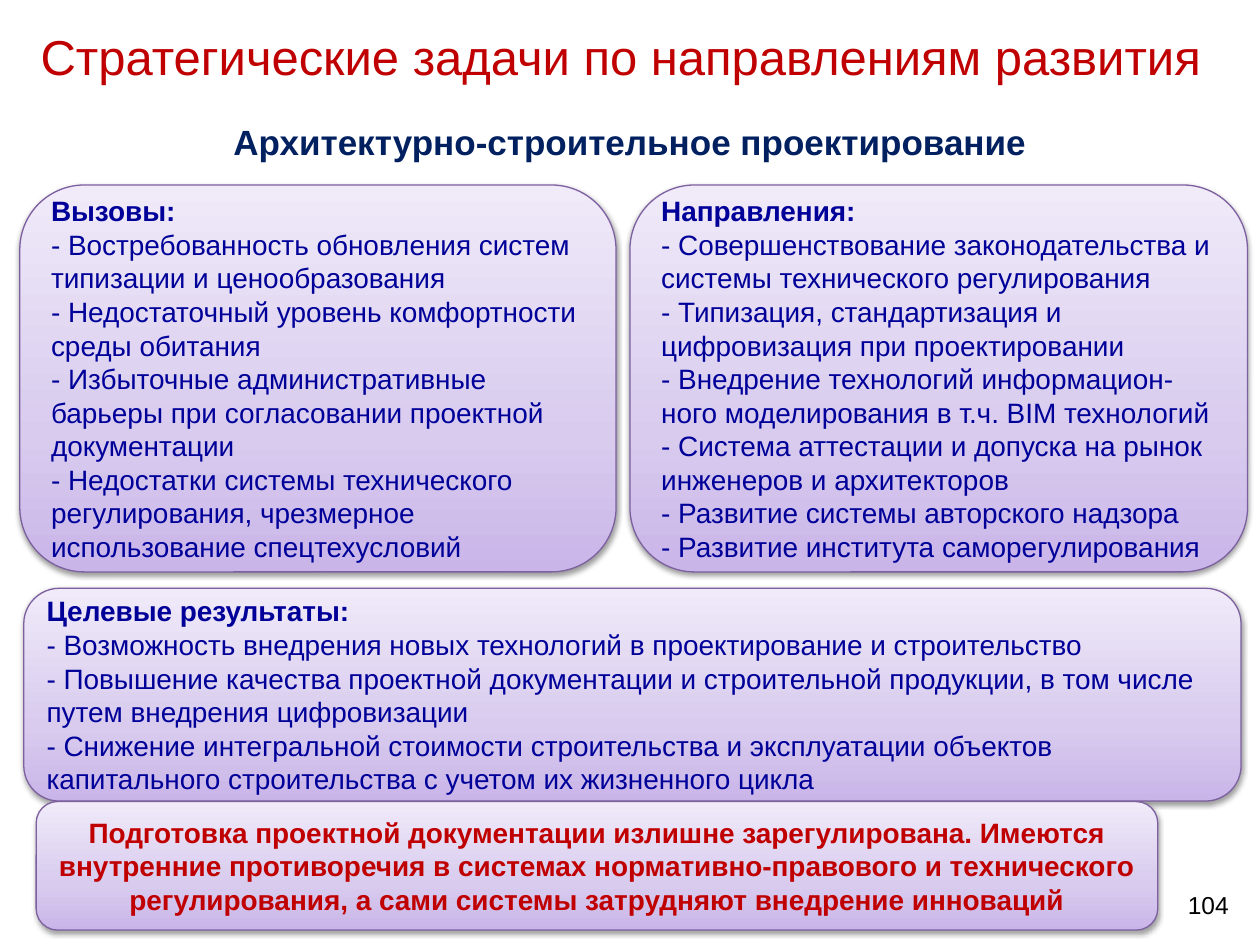
from dataclasses import dataclass

from lxml.etree import SubElement
from pptx import Presentation
from pptx.dml.color import RGBColor
from pptx.enum.shapes import MSO_SHAPE as Shapes
from pptx.enum.text import MSO_ANCHOR as Anchor, PP_ALIGN as Align
from pptx.oxml import parse_xml
from pptx.oxml.ns import nsdecls, qn
from pptx.util import Cm, Pt

FONT = "Arial"
RED, NAVY, BLUE, BLACK = "C00000", "002060", "000099", "000000"
PURPLE = "7D60A0"
GRADIENT = ((0, "C9B5E8"), (35, "D8CBEE"), (100, "F0EAF9"))
UPWARD = 270


@dataclass(frozen=True)
class Box:
    left: float
    top: float
    width: float
    height: float

    def lengths(self) -> tuple:
        return Cm(self.left), Cm(self.top), Cm(self.width), Cm(self.height)


@dataclass(frozen=True)
class Panel:
    box: Box
    heading: str
    items: tuple = ()
    color: str = BLUE
    align: Align = Align.LEFT


PANELS = (
    Panel(Box(0.4, 3.73, 12.02, 7.8), "Вызовы:", (
        "Востребованность обновления систем типизации и ценообразования",
        "Недостаточный уровень комфортности среды обитания",
        "Избыточные административные барьеры при согласовании проектной документации",
        "Недостатки системы технического регулирования, чрезмерное использование спецтехусловий",
    )),
    Panel(Box(12.7, 3.73, 12.45, 7.8), "Направления:", (
        "Совершенствование законодательства и системы технического регулирования",
        "Типизация, стандартизация и цифровизация при проектировании",
        "Внедрение технологий информацион-ного моделирования в т.ч. BIM технологий",
        "Система аттестации и допуска на рынок инженеров и архитекторов",
        "Развитие системы авторского надзора",
        "Развитие института саморегулирования",
    )),
    Panel(Box(0.48, 11.86, 24.54, 4.29), "Целевые результаты:", (
        "Возможность внедрения новых технологий в проектирование и строительство",
        "Повышение качества проектной документации и строительной продукции, "
        "в том числе путем внедрения цифровизации",
        "Снижение интегральной стоимости строительства и эксплуатации объектов "
        "капитального строительства с учетом их жизненного цикла",
    )),
    Panel(
        Box(0.73, 16.16, 22.61, 2.59),
        "Подготовка проектной документации излишне зарегулирована. Имеются внутренние "
        "противоречия в системах нормативно-правового и технического регулирования, "
        "а сами системы затрудняют внедрение инноваций",
        color=RED, align=Align.CENTER,
    ),
)


def rgb(value: str) -> RGBColor:
    return RGBColor.from_string(value)


def write(paragraph, text: str, *, size: float, color: str, bold: bool = False,
          align: Align = Align.LEFT, spacing=None) -> None:
    paragraph.alignment = align
    paragraph.line_spacing = spacing
    run = paragraph.add_run()
    run.text = text
    run.font.name = FONT
    run.font.size = Pt(size)
    run.font.bold = bold
    run.font.color.rgb = rgb(color)


def add_label(slide, box: Box, text: str, **text_format) -> None:
    frame = slide.shapes.add_textbox(*box.lengths()).text_frame
    frame.word_wrap = True
    frame.vertical_anchor = Anchor.MIDDLE
    write(frame.paragraphs[0], text, **text_format)


def add_gradient(shape) -> None:
    shape.fill.gradient()
    gradient = shape._element.spPr.find(qn("a:gradFill"))
    stops = gradient.find(qn("a:gsLst"))
    for stop in list(stops):
        stops.remove(stop)
    for position, color in GRADIENT:
        stop = SubElement(stops, qn("a:gs"), pos=str(position * 1000))
        SubElement(stop, qn("a:srgbClr"), val=color)
    gradient.find(qn("a:lin")).set("ang", str(UPWARD * 60000))


def add_shadow(shape) -> None:
    shape.shadow.inherit = False
    effects = shape._element.spPr.find(qn("a:effectLst"))
    effects.append(parse_xml(
        f'<a:outerShdw {nsdecls("a")} blurRad="{Pt(3.1)}" dist="{Pt(1.6)}" '
        f'dir="5400000" rotWithShape="0"><a:srgbClr val="{BLACK}">'
        '<a:alpha val="38000"/></a:srgbClr></a:outerShdw>'
    ))


def add_panel(slide, panel: Panel) -> None:
    shape = slide.shapes.add_shape(Shapes.ROUNDED_RECTANGLE, *panel.box.lengths())
    add_gradient(shape)
    shape.line.color.rgb = rgb(PURPLE)
    shape.line.width = Pt(0.75)
    add_shadow(shape)
    frame = shape.text_frame
    frame.word_wrap = True
    frame.vertical_anchor = Anchor.MIDDLE
    text_format = dict(size=16, color=panel.color, align=panel.align, spacing=Pt(19.2))
    write(frame.paragraphs[0], panel.heading, bold=True, **text_format)
    for item in panel.items:
        write(frame.add_paragraph(), f"- {item}", **text_format)


def main() -> None:
    """Build the slide of strategic tasks for architectural design."""
    presentation = Presentation()
    presentation.slide_width, presentation.slide_height = Cm(25.4), Cm(19.05)
    slide = presentation.slides.add_slide(presentation.slide_layouts[6])
    add_label(slide, Box(19.1, 17.73, 5.92, 1.02), "104",
              size=14, color=BLACK, align=Align.RIGHT)
    add_label(slide, Box(0.1, 2.13, 25.2, 1.45), "Архитектурно-строительное проектирование",
              size=20, color=NAVY, bold=True, align=Align.CENTER)
    for panel in PANELS:
        add_panel(slide, panel)
    add_label(slide, Box(0.28, 0.08, 24.46, 2.11),
              "Стратегические задачи по направлениям развития",
              size=28, color=RED, align=Align.CENTER)
    presentation.save("out.pptx")


if __name__ == "__main__":
    main()
